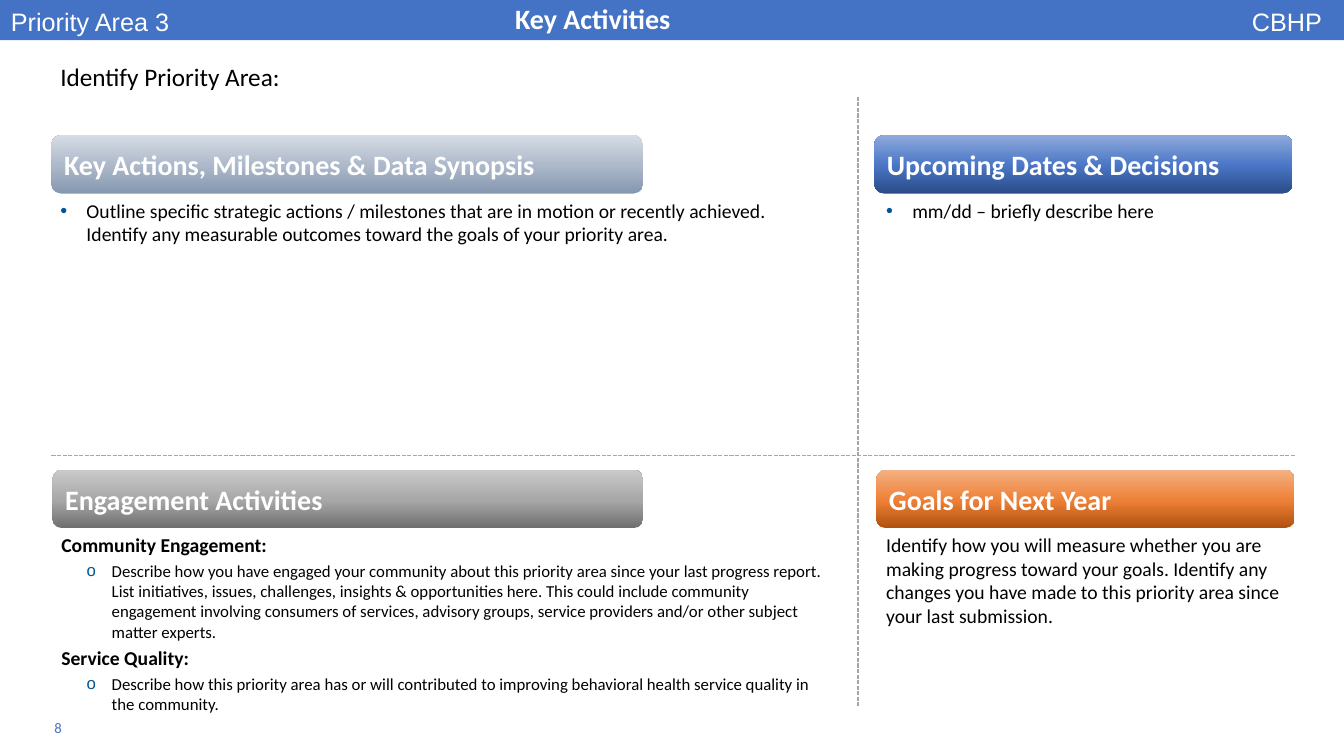
import copy
from dataclasses import dataclass

import pptx
import pptx.dml.color
import pptx.enum.dml
import pptx.enum.shapes
import pptx.enum.text
import pptx.oxml
import pptx.oxml.ns
import pptx.util
from pptx.util import Inches


@dataclass(frozen=True)
class Theme:
    heading_font: str = "Calibri"
    label_font: str = "Arial"
    accent: str = "4472C4"
    bullet: str = "005595"
    divider: str = "A6A6A6"
    black: str = "000000"
    white: str = "FFFFFF"
    slate: tuple = ("8497B0", "ADB9CA", "D6DCE5")
    gray: tuple = ("6F6F6F", "A8A8A8", "C9C9C9")
    blue: tuple = ("2A4B86", "4A76C6", "8FAADC")
    orange: tuple = ("B0500F", "EE8137", "F4B183")
    heading_size: float = 20
    label_size: float = 18
    body_size: float = 14
    detail_size: float = 12
    number_size: float = 10.5


THEME = Theme()
SHAPE = pptx.enum.shapes.MSO_SHAPE
ALIGN = pptx.enum.text.PP_ALIGN
ANCHOR = pptx.enum.text.MSO_ANCHOR
BANNER_HEIGHT = 0.58


def color(value):
    return pptx.dml.color.RGBColor.from_string(value)


def add_run(paragraph, text, size, ink=THEME.black, bold=False, font=THEME.heading_font):
    run = paragraph.add_run()
    run.text = text
    run.font.name = font
    run.font.size = pptx.util.Pt(size)
    run.font.bold = bold
    run.font.color.rgb = color(ink)


def add_textbox(slide, box, wrap=True):
    frame = slide.shapes.add_textbox(*map(Inches, box)).text_frame
    frame.word_wrap = wrap
    return frame


def set_bullet(paragraph, character, left, hanging):
    properties = paragraph._p.get_or_add_pPr()
    properties.set("marL", str(Inches(left)))
    properties.set("indent", str(-Inches(hanging)))
    namespace = pptx.oxml.ns.nsdecls("a")
    for xml in (
        f'<a:buClr {namespace}><a:srgbClr val="{THEME.bullet}"/></a:buClr>',
        f'<a:buFont {namespace} typeface="{THEME.label_font}"/>',
        f'<a:buChar {namespace} char="{character}"/>',
    ):
        properties.append(pptx.oxml.parse_xml(xml))


def add_label(slide, box, text, size=THEME.label_size, ink=THEME.black, bold=False,
              font=THEME.heading_font, align=ALIGN.LEFT, wrap=True, anchor=ANCHOR.TOP):
    frame = add_textbox(slide, box, wrap)
    frame.vertical_anchor = anchor
    paragraph = frame.paragraphs[0]
    paragraph.alignment = align
    add_run(paragraph, text, size, ink, bold, font)


def add_header(slide, box):
    left, top, width, height = box
    bar = slide.shapes.add_shape(SHAPE.RECTANGLE, *map(Inches, box))
    bar.shadow.inherit = False
    bar.fill.solid()
    bar.fill.fore_color.rgb = color(THEME.accent)
    bar.line.fill.background()
    add_label(slide, (left + 0.01, top + 0.01, 4.99, height), "Priority Area 3",
              ink=THEME.white, font=THEME.label_font)
    add_label(slide, (left + 5.01, top - 0.03, 1.82, 0.44), "Key Activities",
              THEME.heading_size, THEME.white, bold=True, wrap=False)
    add_label(slide, (left + width - 1.02, top + 0.01, 0.9, height), "CBHP",
              ink=THEME.white, font=THEME.label_font, align=ALIGN.RIGHT, wrap=False)


def add_banner(slide, box, title, shades):
    banner = slide.shapes.add_shape(SHAPE.ROUNDED_RECTANGLE, *map(Inches, box))
    banner.shadow.inherit = False
    banner.line.fill.background()
    banner.fill.gradient()
    banner.fill.gradient_angle = 90
    stop_list = banner._element.spPr.find(".//" + pptx.oxml.ns.qn("a:gsLst"))
    stop_list.append(copy.deepcopy(stop_list[0]))
    for stop, position, shade in zip(banner.fill.gradient_stops, (0, 0.48, 1), shades):
        stop.position = position
        stop.color.rgb = color(shade)
    frame = banner.text_frame
    frame.word_wrap = True
    frame.vertical_anchor = ANCHOR.MIDDLE
    frame.paragraphs[0].alignment = ALIGN.LEFT
    add_run(frame.paragraphs[0], title, THEME.heading_size, THEME.white, bold=True)


def add_section(slide, box, banner_width, title, shades, entries, text_left=None):
    left, top, width, height = box
    add_banner(slide, (left, top, banner_width, BANNER_HEIGHT), title, shades)
    text_left = left if text_left is None else text_left
    frame = add_textbox(slide, (text_left, top + BANNER_HEIGHT, width, height - BANNER_HEIGHT))
    for index, (kind, text) in enumerate(entries):
        paragraph = frame.add_paragraph() if index else frame.paragraphs[0]
        paragraph.space_after = pptx.util.Pt(6 if kind == "bullet" else 3)
        if kind == "bullet":
            set_bullet(paragraph, "•", 0.26, 0.26)
        elif kind == "detail":
            paragraph.level = 1
            set_bullet(paragraph, "o", 0.5, 0.25)
        size = THEME.detail_size if kind == "detail" else THEME.body_size
        add_run(paragraph, text, size, bold=kind == "subhead")


def add_divider(slide, start, end):
    line = slide.shapes.add_connector(
        pptx.enum.shapes.MSO_CONNECTOR.STRAIGHT, *map(Inches, start + end))
    line.line.color.rgb = color(THEME.divider)
    line.line.width = pptx.util.Pt(1)
    line.line.dash_style = pptx.enum.dml.MSO_LINE.SQUARE_DOT
    line.line._ln.find(pptx.oxml.ns.qn("a:prstDash")).set("val", "sysDash")
    line._element.spPr.append(
        pptx.oxml.parse_xml(f'<a:effectLst {pptx.oxml.ns.nsdecls("a")}/>'))


def build_activities_slide(presentation):
    slide = presentation.slides.add_slide(presentation.slide_layouts[6])
    add_header(slide, (0, 0, 13.33, 0.4))
    add_label(slide, (0.5, 0.56, 7.84, 0.4), "Identify Priority Area:")
    add_section(slide, (0.51, 1.34, 7.84, 3.18), 5.87,
                "Key Actions, Milestones & Data Synopsis", THEME.slate, [
        ("bullet", "Outline specific strategic actions / milestones that are in motion or "
                   "recently achieved. Identify any measurable outcomes toward the goals of "
                   "your priority area."),
    ], text_left=0.5)
    add_section(slide, (8.67, 1.34, 4.15, 3.07), 4.15,
                "Upcoming Dates & Decisions", THEME.blue, [
        ("bullet", "mm/dd – briefly describe here"),
    ], text_left=8.69)
    add_section(slide, (0.52, 4.66, 7.82, 2.34), 5.86,
                "Engagement Activities", THEME.gray, [
        ("subhead", "Community Engagement:"),
        ("detail", "Describe how you have engaged your community about this priority area "
                   "since your last progress report. List initiatives, issues, challenges, "
                   "insights & opportunities here. This could include community engagement "
                   "involving consumers of services, advisory groups, service providers "
                   "and/or other subject matter experts."),
        ("subhead", "Service Quality:"),
        ("detail", "Describe how this priority area has or will contributed to improving "
                   "behavioral health service quality in the community."),
    ], text_left=0.51)
    add_section(slide, (8.69, 4.66, 4.15, 1.62), 4.15,
                "Goals for Next Year", THEME.orange, [
        ("plain", "Identify how you will measure whether you are making progress toward your "
                  "goals. Identify any changes you have made to this priority area since your "
                  "last submission."),
    ])
    add_divider(slide, (8.51, 0.96), (8.51, 7))
    add_divider(slide, (0.51, 4.52), (12.85, 4.52))
    add_label(slide, (0.44, 7.08, 3.11, 0.27), "8", THEME.number_size, THEME.accent,
              anchor=ANCHOR.MIDDLE)


def main():
    presentation = pptx.Presentation()
    presentation.slide_width = Inches(13.33)
    presentation.slide_height = Inches(7.5)
    build_activities_slide(presentation)
    presentation.save("out.pptx")


if __name__ == "__main__":
    main()
